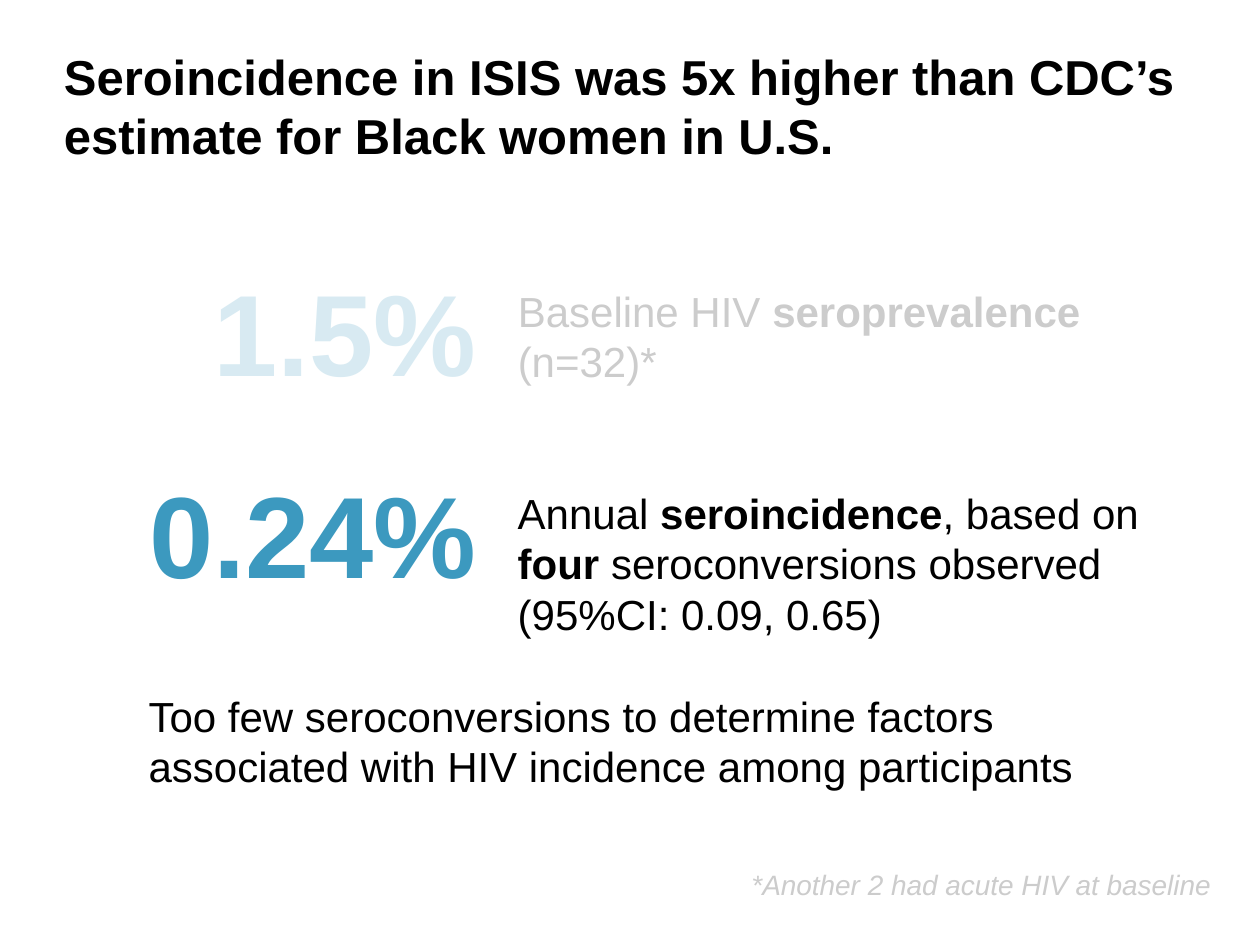
from dataclasses import dataclass

from lxml import etree
from pptx import Presentation
from pptx.dml.color import RGBColor
from pptx.enum.shapes import MSO_SHAPE
from pptx.enum.text import MSO_AUTO_SIZE, PP_ALIGN
from pptx.oxml.ns import qn
from pptx.util import Pt

LEFT, RIGHT = PP_ALIGN.LEFT, PP_ALIGN.RIGHT
FIT_SHAPE = MSO_AUTO_SIZE.SHAPE_TO_FIT_TEXT
RECTANGLE = MSO_SHAPE.RECTANGLE


@dataclass(frozen=True)
class Theme:
    font: str = "Arial"
    ink: RGBColor = RGBColor(0x00, 0x00, 0x00)
    accent: RGBColor = RGBColor(0x3C, 0x99, 0xBF)
    veil: RGBColor = RGBColor(0xFF, 0xFF, 0xFF)
    veil_opacity: int = 80
    title: int = 28
    body: int = 24
    figure: int = 66
    footnote: int = 16


THEME = Theme()


def add_text(slide, box, runs, size=THEME.body, color=THEME.ink, italic=False, align=LEFT):
    """Write one paragraph of (text, bold) runs; a newline becomes a line break."""
    shape = slide.shapes.add_textbox(*map(Pt, box))
    frame = shape.text_frame
    frame.word_wrap = True
    frame.auto_size = FIT_SHAPE
    paragraph = frame.paragraphs[0]
    paragraph.alignment = align
    for text, bold in runs:
        for index, line in enumerate(text.split("\n")):
            if index:
                paragraph.add_line_break()
            run = paragraph.add_run()
            run.text = line
            font = run.font
            font.name, font.size, font.color.rgb = THEME.font, Pt(size), color
            font.bold, font.italic = bold, italic


def add_veil(slide, box):
    """Fade what lies behind the box with translucent white."""
    shape = slide.shapes.add_shape(RECTANGLE, *map(Pt, box))
    shape.shadow.inherit = False
    shape.line.fill.background()
    shape.fill.solid()
    shape.fill.fore_color.rgb = THEME.veil
    color = shape.fill._xPr.find(qn("a:solidFill"))[0]
    etree.SubElement(color, qn("a:alpha"), val=str(THEME.veil_opacity * 1000))


def add_finding(slide, box, figure, runs):
    """Place a large figure at the left and its explanation at the right."""
    left, top, width, height = box
    figure_width, text_offset, text_drop = 201.6, 211, 13.7
    add_text(slide, (left, top, figure_width, 87.1), [(figure, True)],
             size=THEME.figure, color=THEME.accent, align=RIGHT)
    add_text(slide, (left + text_offset, top + text_drop, width - text_offset, height - text_drop), runs)


def add_findings(slide, box):
    left, top, pitch = box
    add_finding(slide, (left, top, 591.9, 79.2), "1.5%", [
        ("Baseline HIV ", False), ("seroprevalence", True), (" (n=32)*", False)])
    add_finding(slide, (left, top + pitch, 612, 108), "0.24%", [
        ("Annual ", False), ("seroincidence", True), (", based on ", False),
        ("four ", True), ("seroconversions observed\n(95%CI: 0.09, 0.65)", False)])


def main():
    presentation = Presentation()
    presentation.slide_width, presentation.slide_height = Pt(720), Pt(540)
    slide = presentation.slides.add_slide(presentation.slide_layouts[6])

    add_text(slide, (29.5, 23, 659.5, 74.9), [
        ("Seroincidence in ISIS was 5x higher than CDC’s estimate for Black women in U.S.", True)],
        size=THEME.title)
    add_findings(slide, (77.8, 145.6, 115.7))
    add_text(slide, (77.8, 391, 591, 65.5), [
        ("Too few seroconversions to determine factors associated with HIV incidence "
         "among participants", False)])
    add_text(slide, (337.7, 492.5, 361.4, 26.6), [("*Another 2 had acute HIV at baseline", False)],
             size=THEME.footnote, italic=True, align=RIGHT)

    add_veil(slide, (68.4, 118, 601.2, 143.3))
    add_veil(slide, (411.8, 488.2, 308.2, 43.2))
    presentation.save("out.pptx")


if __name__ == "__main__":
    main()
